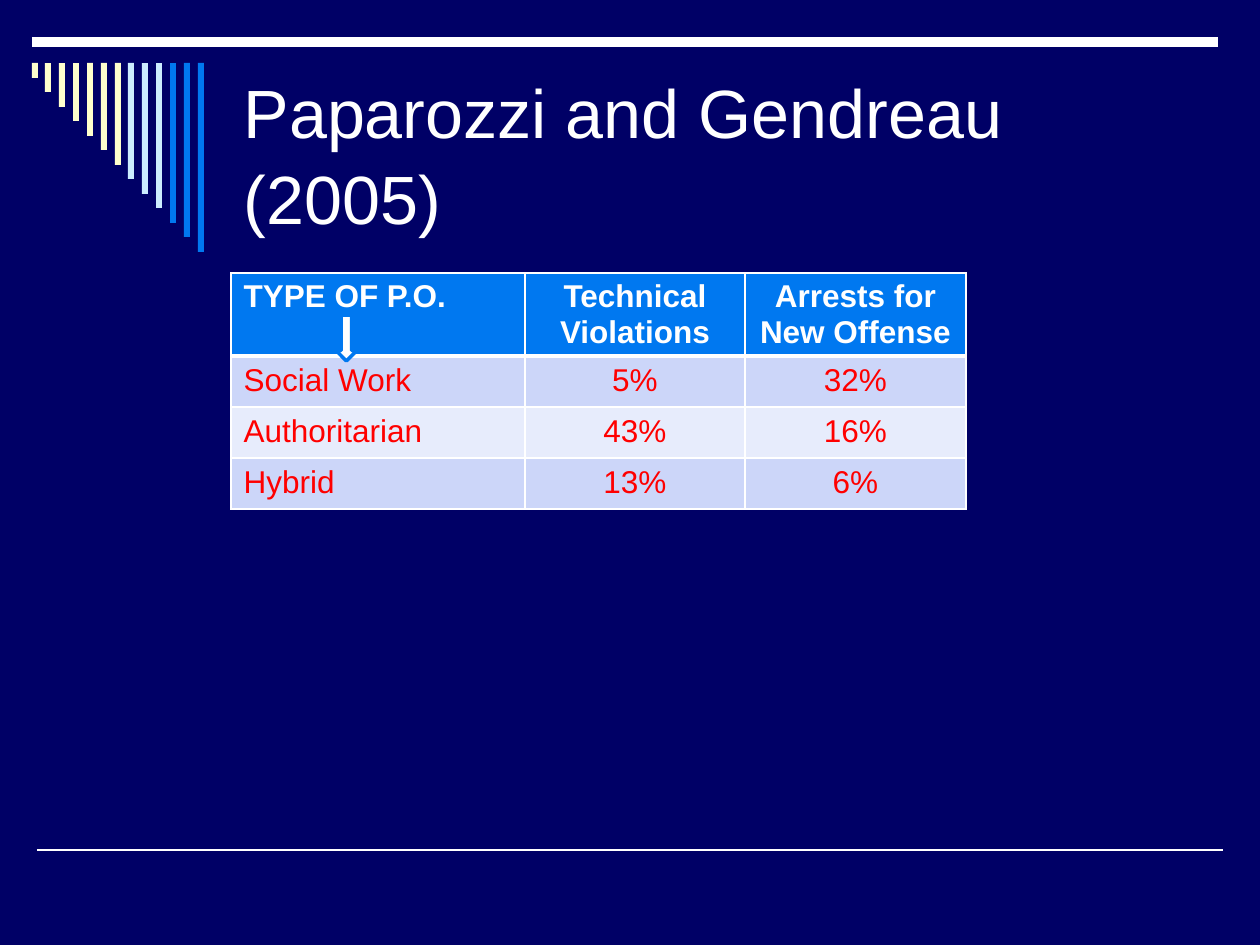
from typing import NamedTuple

from lxml.etree import SubElement
from pptx import Presentation
from pptx.dml.color import RGBColor
from pptx.enum.shapes import MSO_CONNECTOR, MSO_SHAPE
from pptx.enum.text import MSO_ANCHOR, PP_ALIGN
from pptx.oxml.ns import qn
from pptx.util import Emu, Pt

PX = 914400 // 126
NAVY, WHITE, BLUE, RED = "000066", "FFFFFF", "0078F0", "FF0000"
CREAM, PALE_BLUE = "FFFFCC", "CCECFF"
BANDS = ("CCD6F9", "E7ECFC")
BAR_COLORS = [CREAM] * 7 + [PALE_BLUE] * 3 + [BLUE] * 3
HEADER_HEIGHT, ROW_HEIGHT = 83, 51
COLUMN_WIDTHS = (294, 220, 221)


class Box(NamedTuple):
    left: int
    top: int
    width: int
    height: int

    def emu(self) -> list[Emu]:
        return [px(length) for length in self]


class Rule(NamedTuple):
    left: int
    right: int
    y: int
    weight: int


class Officer(NamedTuple):
    kind: str
    violations: str
    arrests: str


RULES = [Rule(37, 1223, 850, 1), Rule(32, 1218, 42, 6)]
HEADINGS = Officer("TYPE OF P.O.", "Technical Violations", "Arrests for New Offense")
OFFICERS = [
    Officer("Social Work", "5%", "32%"),
    Officer("Authoritarian", "43%", "16%"),
    Officer("Hybrid", "13%", "6%"),
]


def px(length: int) -> Emu:
    return Emu(length * PX)


def rgb(color: str) -> RGBColor:
    return RGBColor.from_string(color)


def add_run(paragraph, text: str, size: int, color: str, bold: bool = False) -> None:
    run = paragraph.add_run()
    run.text = text
    run.font.name = "Arial"
    run.font.size = Pt(size)
    run.font.bold = bold
    run.font.color.rgb = rgb(color)


def draw_rule(slide, rule: Rule) -> None:
    line = slide.shapes.add_connector(
        MSO_CONNECTOR.STRAIGHT, px(rule.left), px(rule.y), px(rule.right), px(rule.y))
    line.line.color.rgb = rgb(WHITE)
    line.line.width = Pt(rule.weight)
    SubElement(line._element.spPr, qn("a:effectLst"))


def draw_shape(slide, preset: MSO_SHAPE, box: Box, fill: str, outline: str = ""):
    shape = slide.shapes.add_shape(preset, *box.emu())
    shape.shadow.inherit = False
    shape.fill.solid()
    shape.fill.fore_color.rgb = rgb(fill)
    if outline:
        shape.line.color.rgb = rgb(outline)
        shape.line.width = Pt(2)
    else:
        shape.line.fill.background()


def draw_bars(slide) -> None:
    """Draw the row of bars that grow longer in even steps."""
    steps = len(BAR_COLORS) - 1
    for i, color in enumerate(BAR_COLORS):
        bar = Box(32 + i * 166 // steps, 63, 6, 15 + i * 174 // steps)
        draw_shape(slide, MSO_SHAPE.RECTANGLE, bar, color)


def set_borders(cell, top: int, bottom: int) -> None:
    properties = cell._tc.get_or_add_tcPr()
    for side, weight in (("L", 1), ("R", 1), ("T", top), ("B", bottom)):
        border = SubElement(properties, qn(f"a:ln{side}"), w=str(Pt(weight)))
        fill = SubElement(border, qn("a:solidFill"))
        SubElement(fill, qn("a:srgbClr"), val=WHITE)


def draw_table(slide, box: Box) -> None:
    rows = [HEADINGS, *OFFICERS]
    table = slide.shapes.add_table(len(rows), len(COLUMN_WIDTHS), *box.emu()).table
    for column, width in zip(table.columns, COLUMN_WIDTHS):
        column.width = px(width)
    for r, officer in enumerate(rows):
        header = r == 0
        table.rows[r].height = px(HEADER_HEIGHT if header else ROW_HEIGHT)
        for c, text in enumerate(officer):
            cell = table.cell(r, c)
            set_borders(cell, top=3 if r == 1 else 1, bottom=3 if header else 1)
            cell.fill.solid()
            cell.fill.fore_color.rgb = rgb(BLUE if header else BANDS[(r - 1) % 2])
            paragraph = cell.text_frame.paragraphs[0]
            paragraph.alignment = PP_ALIGN.CENTER if c else PP_ALIGN.LEFT
            add_run(paragraph, text, 18, WHITE if header else RED, bold=header)


def place_title(slide, text: str, box: Box) -> None:
    title = slide.shapes.title
    title.left, title.top, title.width, title.height = box.emu()
    title.text_frame.word_wrap = True
    title.text_frame.vertical_anchor = MSO_ANCHOR.MIDDLE
    paragraph = title.text_frame.paragraphs[0]
    paragraph.alignment = PP_ALIGN.LEFT
    paragraph.line_spacing = 1.05
    add_run(paragraph, text, 39, WHITE)


def main() -> None:
    deck = Presentation()
    deck.slide_width, deck.slide_height = px(1260), px(945)
    slide = deck.slides.add_slide(deck.slide_layouts[5])
    slide.background.fill.solid()
    slide.background.fill.fore_color.rgb = rgb(NAVY)

    for rule in RULES:
        draw_rule(slide, rule)
    draw_bars(slide)
    place_title(slide, "Paparozzi and Gendreau (2005)", Box(231, 63, 966, 179))
    table_height = HEADER_HEIGHT + ROW_HEIGHT * len(OFFICERS)
    draw_table(slide, Box(231, 273, sum(COLUMN_WIDTHS), table_height))
    draw_shape(slide, MSO_SHAPE.DOWN_ARROW, Box(336, 315, 21, 46), WHITE, BLUE)
    deck.save("out.pptx")


if __name__ == "__main__":
    main()
